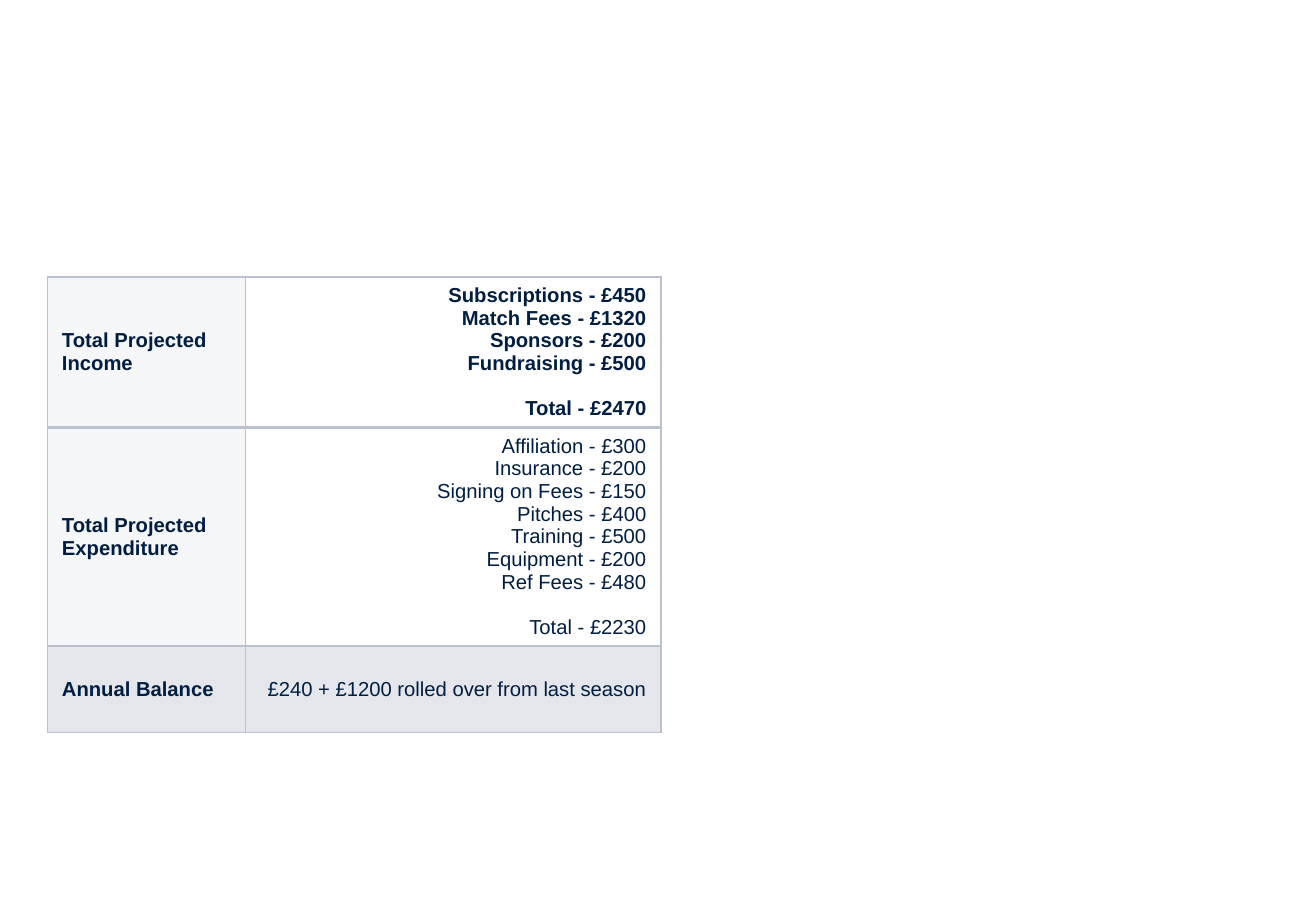
import dataclasses

import lxml.etree
import pptx
import pptx.dml.color
import pptx.enum.text
import pptx.oxml.ns
import pptx.util

NAVY = "011E41"
BORDER = "BBC1CE"
FONT_SIZE = 12
LINE_HEIGHT = 13.4


@dataclasses.dataclass
class BudgetRow:
    label: str
    items: list[str]
    height: float
    label_fill: str
    items_fill: str
    bold_items: bool = False
    alpha: int = 100
    top_line: float = 1
    bottom_line: float = 1


ROWS = [
    BudgetRow(
        "Total Projected Income",
        ["Subscriptions - £450", "Match Fees - £1320", "Sponsors - £200",
         "Fundraising - £500", "Total - £2470"],
        1.24, "F1F3F5", "FFFFFF", bold_items=True, alpha=70, bottom_line=2,
    ),
    BudgetRow(
        "Total Projected Expenditure",
        ["Affiliation - £300", "Insurance - £200", "Signing on Fees - £150",
         "Pitches - £400", "Training - £500", "Equipment - £200",
         "Ref Fees - £480", "Total - £2230"],
        1.8, "F1F3F5", "FFFFFF", alpha=70, top_line=2,
    ),
    BudgetRow(
        "Annual Balance", ["£240 + £1200 rolled over from last season"],
        0.71, "E4E6EB", "E4E6EB",
    ),
]
COLUMN_WIDTHS = [1.63, 3.42]


def color(value: str) -> pptx.dml.color.RGBColor:
    return pptx.dml.color.RGBColor.from_string(value)


def add_element(parent, tag: str, **attributes: str):
    element = lxml.etree.SubElement(parent, pptx.oxml.ns.qn(tag))
    for name, value in attributes.items():
        element.set(name, value)
    return element


def set_borders(cell, top: float, bottom: float) -> None:
    tcPr = cell._tc.get_or_add_tcPr()
    for side, width in (("L", 1), ("R", 1), ("T", top), ("B", bottom)):
        ln = add_element(tcPr, f"a:ln{side}", w=str(pptx.util.Pt(width)))
        fill = add_element(ln, "a:solidFill")
        add_element(fill, "a:srgbClr", val=BORDER)


def set_fill(cell, value: str, alpha: int) -> None:
    cell.fill.solid()
    cell.fill.fore_color.rgb = color(value)
    if alpha < 100:
        tcPr = cell._tc.get_or_add_tcPr()
        srgb = tcPr.find(pptx.oxml.ns.qn("a:solidFill"))[0]
        add_element(srgb, "a:alpha", val=str(alpha * 1000))


def set_text(cell, lines: list[str], bold: bool, align) -> None:
    cell.vertical_anchor = pptx.enum.text.MSO_ANCHOR.MIDDLE
    cell.margin_left = cell.margin_right = pptx.util.Inches(0.12)
    cell.margin_top = cell.margin_bottom = pptx.util.Inches(0.06)
    tf = cell.text_frame
    tf.text = "\n".join(lines)
    for p in tf.paragraphs:
        p.alignment = align
        for r in p.runs:
            r.font.name = "Arial"
            r.font.size = pptx.util.Pt(FONT_SIZE)
            r.font.bold = bold
            r.font.color.rgb = color(NAVY)
    if len(lines) > 1:
        tf.paragraphs[-1].space_before = pptx.util.Pt(LINE_HEIGHT)


def fill_row(table, index: int, row: BudgetRow) -> None:
    table.rows[index].height = pptx.util.Inches(row.height)
    align = pptx.enum.text.PP_ALIGN
    label, items = table.cell(index, 0), table.cell(index, 1)
    set_text(label, [row.label], True, align.LEFT)
    set_text(items, row.items, row.bold_items, align.RIGHT)
    for cell, fill in ((label, row.label_fill), (items, row.items_fill)):
        set_borders(cell, row.top_line, row.bottom_line)
        set_fill(cell, fill, row.alpha)


def main() -> None:
    prs = pptx.Presentation()
    prs.slide_width = pptx.util.Inches(10.83)
    prs.slide_height = pptx.util.Inches(7.5)
    s = prs.slides.add_slide(prs.slide_layouts[6])
    table = s.shapes.add_table(
        len(ROWS), len(COLUMN_WIDTHS),
        pptx.util.Inches(0.39), pptx.util.Inches(2.28),
        pptx.util.Inches(sum(COLUMN_WIDTHS)),
        pptx.util.Inches(sum(row.height for row in ROWS)),
    ).table
    table.first_row = False
    table.horz_banding = False
    for column, width in zip(table.columns, COLUMN_WIDTHS):
        column.width = pptx.util.Inches(width)
    for index, row in enumerate(ROWS):
        fill_row(table, index, row)
    prs.save("out.pptx")


if __name__ == "__main__":
    main()
